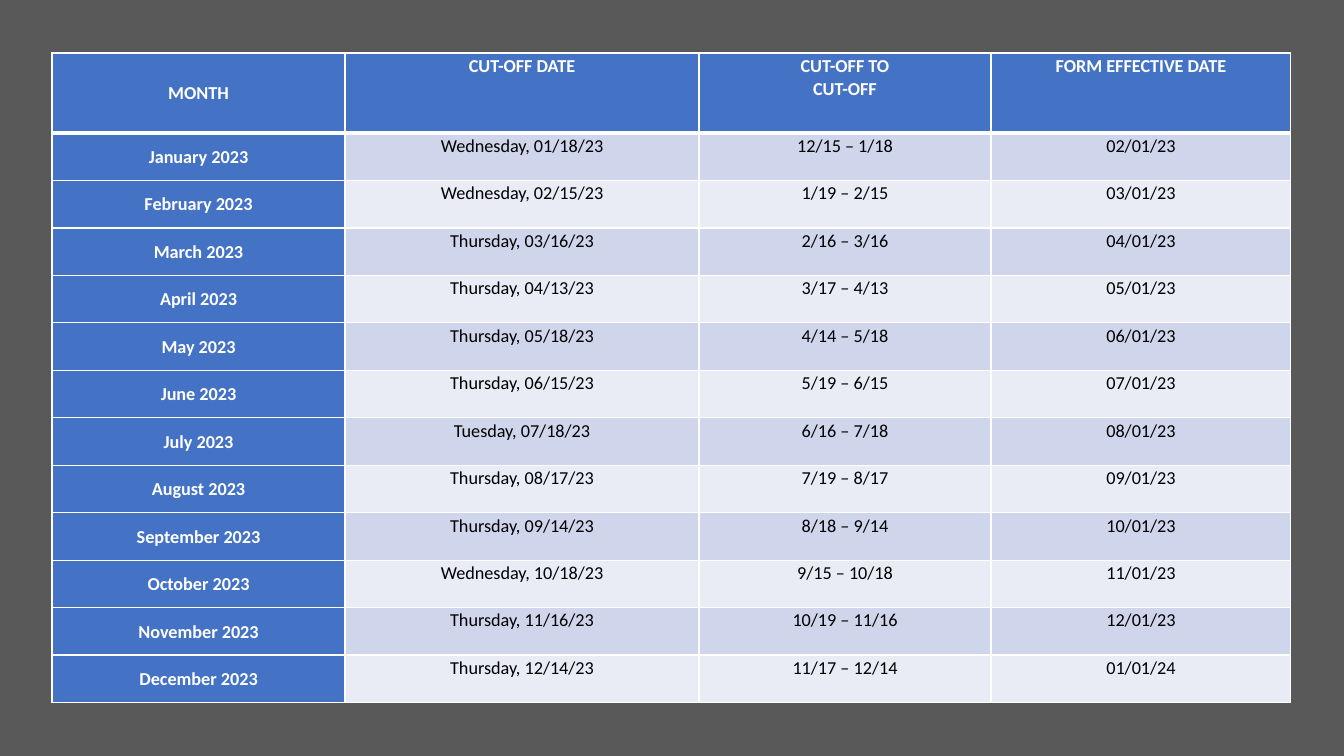
from lxml import etree
from pptx import Presentation
from pptx.dml.color import RGBColor as RGB
from pptx.enum.shapes import MSO_SHAPE as SHAPE
from pptx.enum.text import MSO_ANCHOR as ANCHOR, PP_ALIGN as ALIGN
from pptx.oxml.ns import qn
from pptx.util import Emu, Pt

SLIDE_W, SLIDE_H = 1344, 756
PX = 12192000 / SLIDE_W
COLORS = {
    "backdrop": "595959", "white": "FFFFFF", "black": "000000",
    "blue": "4472C4", "band_dark": "CFD5EA", "band_light": "E9EBF5",
}
TABLE_BOX = (52, 53, 1239, 650)
COL_WIDTHS = (293, 354, 292, 300)
HEADER_H = 80
THIN, THICK = 1, 3
HEADER = ("MONTH", "CUT-OFF DATE", "CUT-OFF TO\nCUT-OFF", "FORM EFFECTIVE DATE")
SCHEDULE = (
    ("January 2023", "Wednesday, 01/18/23", "12/15 – 1/18", "02/01/23"),
    ("February 2023", "Wednesday, 02/15/23", "1/19 – 2/15", "03/01/23"),
    ("March 2023", "Thursday, 03/16/23", "2/16 – 3/16", "04/01/23"),
    ("April 2023", "Thursday, 04/13/23", "3/17 – 4/13", "05/01/23"),
    ("May 2023", "Thursday, 05/18/23", "4/14 – 5/18", "06/01/23"),
    ("June 2023", "Thursday, 06/15/23", "5/19 – 6/15", "07/01/23"),
    ("July 2023", "Tuesday, 07/18/23", "6/16 – 7/18", "08/01/23"),
    ("August 2023", "Thursday, 08/17/23", "7/19 – 8/17", "09/01/23"),
    ("September 2023", "Thursday, 09/14/23", "8/18 – 9/14", "10/01/23"),
    ("October 2023", "Wednesday, 10/18/23", "9/15 – 10/18", "11/01/23"),
    ("November 2023", "Thursday, 11/16/23", "10/19 – 11/16", "12/01/23"),
    ("December 2023", "Thursday, 12/14/23", "11/17 – 12/14", "01/01/24"),
)


def px(n):
    return Emu(round(n * PX))


def rgb(name):
    return RGB.from_string(COLORS[name])


def set_attrs(obj, values):
    for name, value in values.items():
        setattr(obj, name, value)


def add_panel(s, box, color):
    sp = s.shapes.add_shape(SHAPE.RECTANGLE, *map(px, box))
    sp.shadow.inherit = False
    sp.fill.solid()
    sp.fill.fore_color.rgb = rgb(color)
    sp.line.fill.background()


def add_borders(cell, top, bottom):
    """Draw white borders; this must precede the cell fill in the XML."""
    tc_pr = cell._tc.get_or_add_tcPr()
    for side, width in (("L", THIN), ("R", THIN), ("T", top), ("B", bottom)):
        ln = etree.SubElement(tc_pr, qn(f"a:ln{side}"), w=str(Pt(width)))
        fill = etree.SubElement(ln, qn("a:solidFill"))
        etree.SubElement(fill, qn("a:srgbClr"), val=COLORS["white"])


def fill_cell(cell, text, row, col):
    is_month, is_label = col == 0, row == 0 or col == 0
    add_borders(cell, THICK if row == 1 else THIN, THICK if row == 0 else THIN)
    cell.fill.solid()
    band = "band_dark" if row % 2 else "band_light"
    cell.fill.fore_color.rgb = rgb("blue" if is_label else band)
    set_attrs(cell, {
        "text": text,
        "vertical_anchor": ANCHOR.MIDDLE if is_month else ANCHOR.TOP,
        "margin_left": px(1), "margin_right": px(1), "margin_top": px(1),
        "margin_bottom": px(1 if is_month else 0),
    })
    for p in cell.text_frame.paragraphs:
        set_attrs(p, {"alignment": ALIGN.CENTER, "line_spacing": 1.05})
        for r in p.runs:
            set_attrs(r.font, {"name": "Calibri", "size": Pt(13), "bold": is_label})
            r.font.color.rgb = rgb("white" if is_label else "black")


def add_schedule(s, box):
    rows = (HEADER, *SCHEDULE)
    table = s.shapes.add_table(len(rows), len(HEADER), *map(px, box)).table
    set_attrs(table, {"first_row": False, "horz_banding": False})
    for column, width in zip(table.columns, COL_WIDTHS):
        column.width = px(width)
    body_h = (box[3] - HEADER_H) / len(SCHEDULE)
    for i, texts in enumerate(rows):
        table.rows[i].height = px(body_h if i else HEADER_H)
        for j, text in enumerate(texts):
            fill_cell(table.cell(i, j), text, i, j)


def add_schedule_slide(prs):
    s = prs.slides.add_slide(prs.slide_layouts[6])
    add_panel(s, (0, 0, SLIDE_W, SLIDE_H), "backdrop")
    add_panel(s, TABLE_BOX, "white")
    add_schedule(s, TABLE_BOX)


def main():
    prs = Presentation()
    set_attrs(prs, {"slide_width": px(SLIDE_W), "slide_height": px(SLIDE_H)})
    add_schedule_slide(prs)
    prs.save("out.pptx")


if __name__ == "__main__":
    main()
